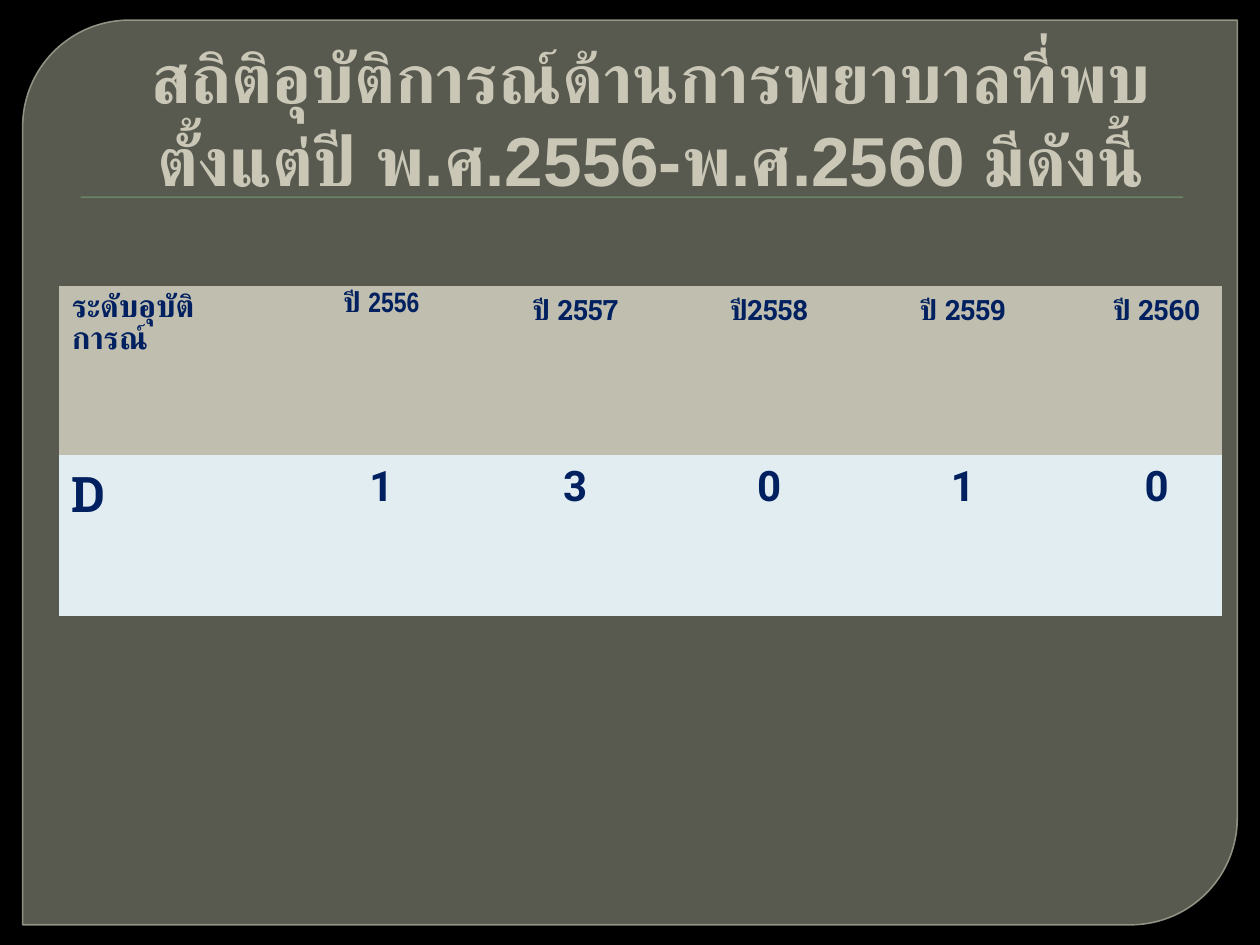
from lxml import etree
from pptx import Presentation
from pptx.dml.color import RGBColor
from pptx.enum.shapes import MSO_SHAPE
from pptx.enum.text import MSO_ANCHOR, PP_ALIGN
from pptx.oxml.ns import qn
from pptx.util import Inches, Pt

PANEL_SHAPE = MSO_SHAPE.ROUND_2_DIAG_RECTANGLE
RECTANGLE = MSO_SHAPE.RECTANGLE
BOTTOM = MSO_ANCHOR.BOTTOM
CENTER = PP_ALIGN.CENTER

COLORS = {
    "background": "000000",
    "panel": "888B7B",
    "panel_line": "9DA090",
    "rule": "72A376",
    "title": "CAC7B7",
    "header": "C0BEAF",
    "body": "E1EDF0",
    "ink": "002060",
}
NO_GRID_STYLE = "{2D5ABB26-0587-4C30-8999-92F81FD0307C}"

TITLE = "สถิติอุบัติการณ์ด้านการพยาบาลที่พบตั้งแต่ปี พ.ศ.2556-พ.ศ.2560 มีดังนี้"
HEADINGS = ["ระดับอุบัติการณ์", "ปี 2556", "ปี 2557", "ปี2558", "ปี 2559", "ปี 2560"]
COUNTS = ["D", "1", "3", "0", "1", "0"]


def color(name):
    return RGBColor.from_string(COLORS[name])


def set_fill(target, name, opacity=100):
    target.fill.solid()
    target.fill.fore_color.rgb = color(name)
    if opacity < 100:
        set_opacity(target.fill._xPr, opacity)


def set_opacity(parent, percent):
    tint = parent.find(qn("a:solidFill"))[0]
    etree.SubElement(tint, qn("a:alpha")).set("val", str(percent * 1000))


def add_block(page, kind, left, top, width, height, fill, opacity=100):
    block = page.shapes.add_shape(
        kind, Inches(left), Inches(top), Inches(width), Inches(height))
    block.shadow.inherit = False
    set_fill(block, fill, opacity)
    block.line.fill.background()
    return block


def add_span(para, text, size, font, ink):
    span = para.add_run()
    span.text = text
    span.font.size = Pt(size)
    span.font.name = font
    span.font.bold = True
    span.font.color.rgb = color(ink)


def set_left_margin(para, inches):
    properties = para._p.get_or_add_pPr()
    properties.set("marL", str(Inches(inches)))
    properties.set("indent", "0")


def add_panel(page):
    panel = add_block(page, PANEL_SHAPE, 0.18, 0.16, 9.64, 7.18, "panel", 65)
    panel.adjustments[0] = 0.118
    panel.adjustments[1] = 0
    panel.line.width = Pt(0.87)
    panel.line.color.rgb = color("panel_line")
    set_opacity(panel.line._ln, 88)


def add_title(page):
    box = page.shapes.add_textbox(Inches(0.5), Inches(0.28), Inches(9.27), Inches(1.36))
    frame = box.text_frame
    frame.word_wrap = True
    frame.vertical_anchor = BOTTOM
    para = frame.paragraphs[0]
    para.alignment = CENTER
    set_left_margin(para, 0.06)
    add_span(para, TITLE, 39.6, "Arial", "title")


def fill_value_cell(cell, text, size, font):
    cell.margin_left = cell.margin_right = Inches(0.07)
    cell.margin_top = cell.margin_bottom = 0
    para = cell.text_frame.paragraphs[0]
    para.alignment = CENTER
    para.line_spacing = 1.15
    set_left_margin(para, 0.5)
    add_span(para, text, size, font, "ink")


def add_incident_table(page):
    table = page.shapes.add_table(
        2, len(HEADINGS), Inches(0.47), Inches(2.27), Inches(9.23), Inches(2.62)).table
    table._tbl.tblPr.find(qn("a:tableStyleId")).text = NO_GRID_STYLE
    # texts, row height, fill, label size, value size, value font
    rows = [
        (HEADINGS, 1.34, "header", 18, 16, "Roboto Slab"),
        (COUNTS, 1.28, "body", 28, 24, "Roboto"),
    ]
    for r, (texts, height, fill, label_size, size, font) in enumerate(rows):
        table.rows[r].height = Inches(height)
        for c, text in enumerate(texts):
            cell = table.cell(r, c)
            set_fill(cell, fill)
            if c == 0:
                para = cell.text_frame.paragraphs[0]
                add_span(para, text, label_size, "Roboto Slab", "ink")
            else:
                narrow = (r, c) == (0, 1)
                fill_value_cell(cell, text, size, "Arial Narrow" if narrow else font)


def main():
    deck = Presentation()
    deck.slide_width, deck.slide_height = Inches(10), Inches(7.5)
    page = deck.slides.add_slide(deck.slide_layouts[6])
    set_fill(page.background, "background")

    # Backdrop
    add_panel(page)
    add_block(page, RECTANGLE, 0.64, 1.56, 8.75, 0.01, "rule")

    # Content
    add_title(page)
    add_incident_table(page)
    deck.save("out.pptx")


if __name__ == "__main__":
    main()
